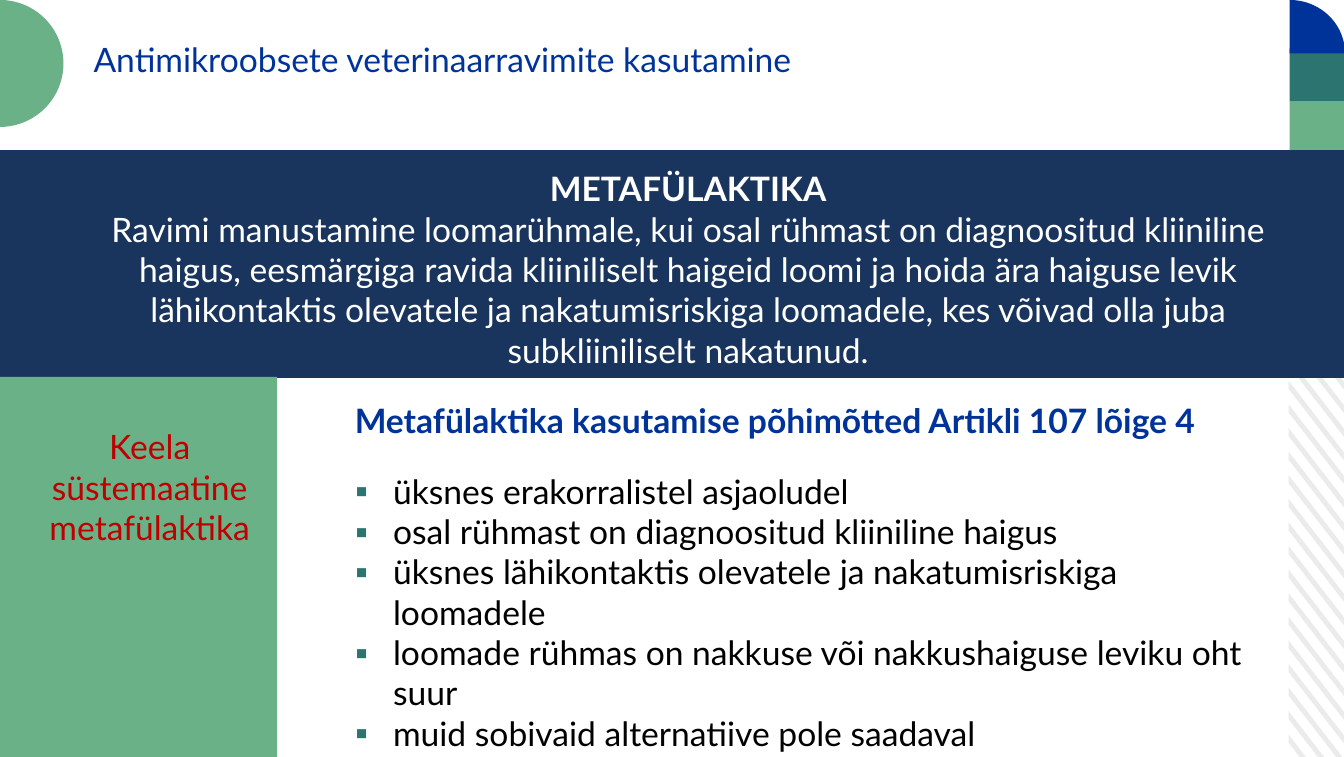
from math import cos, pi, sin

from lxml.etree import SubElement
from pptx import Presentation
from pptx.dml.color import RGBColor
from pptx.enum.shapes import MSO_SHAPE as Shape
from pptx.enum.text import MSO_ANCHOR as Anchor, MSO_AUTO_SIZE as AutoSize, PP_ALIGN as Align
from pptx.oxml.ns import qn
from pptx.util import Inches, Pt

BLUE = RGBColor(0x00, 0x33, 0x99)
NAVY = RGBColor(0x19, 0x35, 0x5D)
TEAL = RGBColor(0x2C, 0x74, 0x70)
GREEN = RGBColor(0x6B, 0xB1, 0x88)
RED = RGBColor(0xC0, 0x00, 0x00)
GREY = RGBColor(0xEC, 0xEB, 0xEB)
WHITE = RGBColor(0xFF, 0xFF, 0xFF)
BLACK = RGBColor(0x00, 0x00, 0x00)

WIDTH, HEIGHT = 13.33, 7.51
BAND_LEFT = 12.79
BAND_TOP = 1.54

TITLE = "Antimikroobsete veterinaarravimite kasutamine"
TERM = "METAFÜLAKTIKA"
DEFINITION = (
    "Ravimi manustamine loomarühmale, kui osal rühmast on diagnoositud kliiniline haigus, "
    "eesmärgiga ravida kliiniliselt haigeid loomi ja hoida ära haiguse levik lähikontaktis "
    "olevatele ja nakatumisriskiga loomadele, kes võivad olla juba subkliiniliselt nakatunud."
)
BAN = "Keela süstemaatine metafülaktika"
PRINCIPLES_HEADING = "Metafülaktika kasutamise põhimõtted Artikli 107 lõige 4"
PRINCIPLES = [
    "üksnes erakorralistel asjaoludel",
    "osal rühmast on diagnoositud kliiniline haigus",
    "üksnes lähikontaktis olevatele ja nakatumisriskiga loomadele",
    "loomade rühmas on nakkuse või nakkushaiguse leviku oht suur",
    "muid sobivaid alternatiive pole saadaval",
]


class SlideBuilder:
    """Draws styled elements on the current slide."""

    font_format = {"name": "Lato", "size": Pt(24), "bold": False}
    frame_format = {
        "word_wrap": True,
        "auto_size": AutoSize.SHAPE_TO_FIT_TEXT,
        "vertical_anchor": Anchor.TOP,
    }

    def __init__(self, slide):
        self.slide = slide

    def paint(self, shape, color):
        shape.shadow.inherit = False
        shape.fill.solid()
        shape.fill.fore_color.rgb = color
        shape.line.fill.background()

    def block(self, left, top, width, height, color):
        area = map(Inches, (left, top, width, height))
        self.paint(self.slide.shapes.add_shape(Shape.RECTANGLE, *area), color)

    def outline(self, contours, color):
        contours = [[(Inches(x), Inches(y)) for x, y in contour] for contour in contours]
        builder = self.slide.shapes.build_freeform(*contours[0][0])
        for number, (start, *rest) in enumerate(contours):
            if number:
                builder.move_to(*start)
            builder.add_line_segments(rest, close=True)
        self.paint(builder.convert_to_shape(), color)

    def sector(self, center, radii, start, end, color, steps=40):
        angles = [start + (end - start) * step / steps for step in range(steps + 1)]
        arc = [(center[0] + radii[0] * cos(a), center[1] + radii[1] * sin(a)) for a in angles]
        self.outline([[center, *arc]], color)

    def stripes(self, left, right, top, bottom, color, pitch=0.234, rise=0.71, thickness=0.08):
        def edge(y):
            ends = [min(max((limit - y) / rise, 0), 1) for limit in (top, bottom)]
            return [(left + (right - left) * t, y + rise * t) for t in ends]

        starts = [0.97 + pitch * number for number in range(28)]
        self.outline([edge(y) + edge(y + thickness)[::-1] for y in starts], color)

    def text_box(self, left, top, width, height):
        area = map(Inches, (left, top, width, height))
        frame = self.slide.shapes.add_textbox(*area).text_frame
        for name, value in self.frame_format.items():
            setattr(frame, name, value)
        return frame

    def paragraph(self, frame, text, color, align=Align.LEFT, bullet=None, before=0, **font):
        first = frame.paragraphs[0]
        paragraph = frame.add_paragraph() if first.runs else first
        paragraph.alignment = align
        if before:
            paragraph.space_before = Pt(before)
        if bullet:
            self.bullet(paragraph, bullet)
        run = paragraph.add_run()
        run.text = text
        for name, value in {**self.font_format, **font}.items():
            setattr(run.font, name, value)
        run.font.color.rgb = color

    def bullet(self, paragraph, color):
        properties = paragraph._p.get_or_add_pPr()
        properties.set("marL", str(Inches(0.38)))
        properties.set("indent", str(-Inches(0.38)))
        bullet_color = SubElement(properties, qn("a:buClr"))
        SubElement(bullet_color, qn("a:srgbClr"), val=str(color))
        SubElement(properties, qn("a:buFont"), typeface="Lato")
        SubElement(properties, qn("a:buChar"), char="▪")


def main():
    deck = Presentation()
    deck.slide_width, deck.slide_height = Inches(WIDTH), Inches(HEIGHT)
    page = SlideBuilder(deck.slides.add_slide(deck.slide_layouts[6]))

    page.stripes(12.78, WIDTH, BAND_TOP, HEIGHT, GREY)
    for top, color in ((0.48, TEAL), (1.01, GREEN)):
        page.block(BAND_LEFT, top, 0.55, 0.53, color)
    page.sector((BAND_LEFT, 0.53), (0.55, 0.53), -pi / 2, 0, BLUE)
    page.sector((0, 0.63), (0.63, 0.63), -pi / 2, pi / 2, GREEN)

    principles = page.text_box(3.42, 3.92, 9.11, 3.23)
    page.paragraph(principles, PRINCIPLES_HEADING, BLUE, bold=True)
    for number, principle in enumerate(PRINCIPLES):
        before = 0 if number else 21.6
        page.paragraph(principles, principle, BLACK, bullet=TEAL, before=before)

    page.block(0, 1.49, WIDTH, 2.26, NAVY)
    definition = page.text_box(0.57, 1.62, 12.51, 2.1)
    page.paragraph(definition, TERM, WHITE, Align.CENTER, bold=True)
    page.paragraph(definition, DEFINITION, WHITE, Align.CENTER)

    page.block(0, 3.74, 2.75, 3.77, GREEN)
    ban = page.text_box(0.11, 4.18, 2.75, 1.3)
    page.paragraph(ban, BAN, RED, Align.CENTER)

    title = page.text_box(0.83, 0.34, 8.76, 0.58)
    page.paragraph(title, TITLE, BLUE)

    deck.save("out.pptx")


if __name__ == "__main__":
    main()
